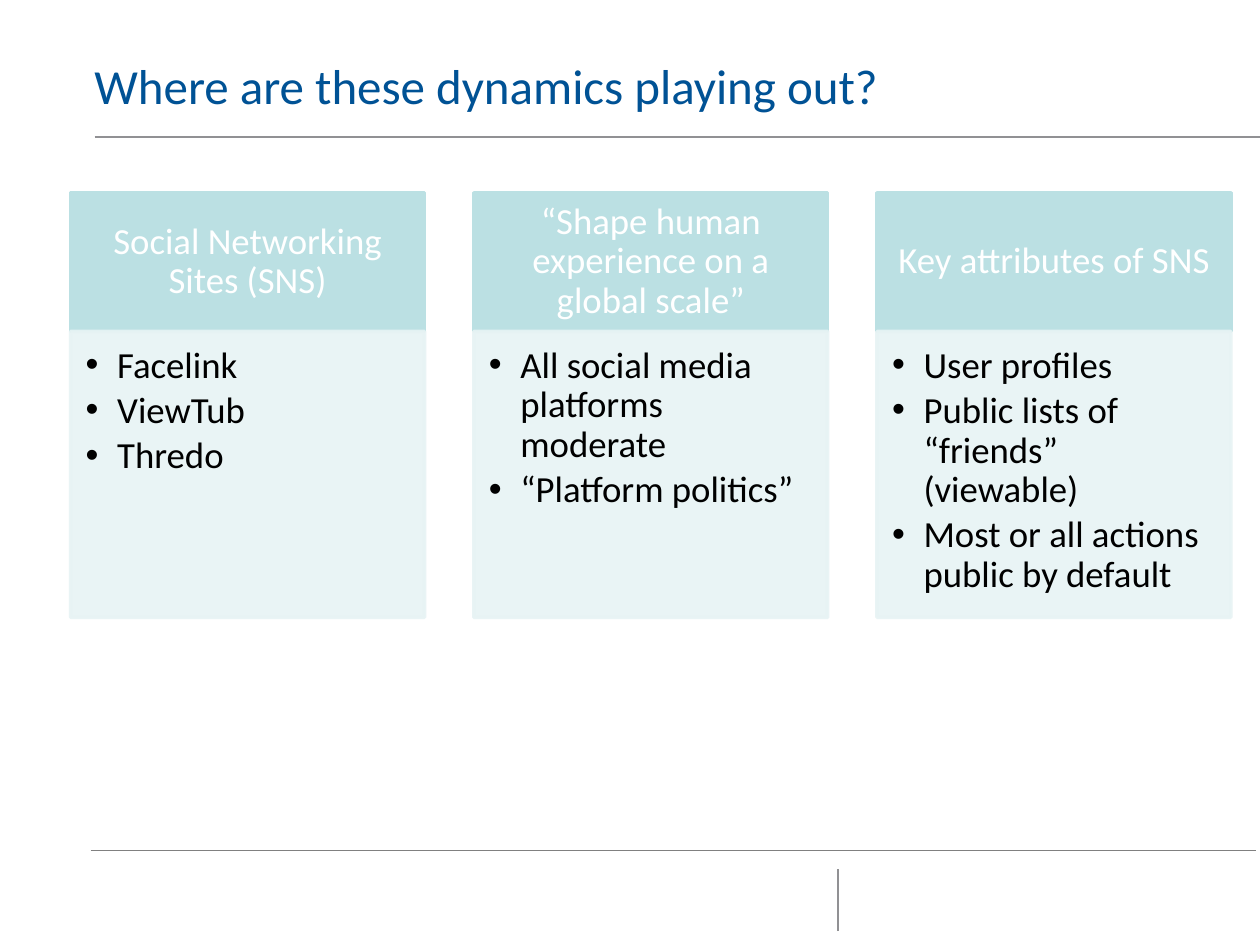
from dataclasses import dataclass

from lxml.etree import SubElement
from pptx import Presentation
from pptx.dml.color import RGBColor
from pptx.enum.shapes import MSO_CONNECTOR, MSO_SHAPE
from pptx.enum.text import MSO_ANCHOR, PP_ALIGN
from pptx.oxml.ns import qn
from pptx.slide import Slide
from pptx.util import Inches, Pt

COLUMNS = [
    ("Social Networking Sites (SNS)", ["Facelink", "ViewTub", "Thredo"]),
    ("“Shape human experience on a global scale”",
     ["All social media platforms moderate", "“Platform politics”"]),
    ("Key attributes of SNS",
     ["User profiles", "Public lists of “friends” (viewable)",
      "Most or all actions public by default"]),
]
RULES = [
    (0.72, 6.75, 9.97, 6.75, "808080"),
    (0.75, 1.09, 10, 1.09, "919194"),
    (6.65, 7.39, 6.65, 6.9, "919194"),
]
LEFT, PITCH, WIDTH = 0.56, 3.2, 2.81
HEADER_TOP, HEADER_HEIGHT, BODY_HEIGHT = 1.53, 1.1, 2.27


def color(value):
    return RGBColor.from_string(value)


@dataclass
class Deck:
    """Draws the elements of the current slide in one style."""
    slide: Slide
    font: str = "Calibri"
    body_size: float = 21
    title_color: str = "005295"
    header_fill: str = "BBE0E3"
    body_fill: str = "E7F3F4"

    def rule(self, x1, y1, x2, y2, stroke):
        line = self.slide.shapes.add_connector(
            MSO_CONNECTOR.STRAIGHT, Inches(x1), Inches(y1), Inches(x2), Inches(y2))
        line.line.color.rgb = color(stroke)
        line.line.width = Pt(1)
        SubElement(line._element.spPr, qn("a:effectLst"))

    def set_text(self, frame, lines, size, ink, insets, spacing, align=PP_ALIGN.LEFT):
        frame.word_wrap = True
        (frame.margin_left, frame.margin_top,
         frame.margin_right, frame.margin_bottom) = map(Inches, insets)
        frame.text = "\n".join(lines)
        for paragraph in frame.paragraphs:
            paragraph.alignment = align
            paragraph.line_spacing = spacing
            for run in paragraph.runs:
                run.font.name = self.font
                run.font.size = Pt(size)
                run.font.color.rgb = color(ink)

    def title(self, text):
        box = self.slide.shapes.add_textbox(
            Inches(0.75), Inches(0.46), Inches(8.63), Inches(1.04))
        self.set_text(box.text_frame, [text], 28, self.title_color, (0, 0, 0, 0), Pt(32))

    def panel(self, left, top, height, fill):
        panel = self.slide.shapes.add_shape(
            MSO_SHAPE.RECTANGLE, Inches(left), Inches(top), Inches(WIDTH), Inches(height))
        panel.shadow.inherit = False
        panel.fill.solid()
        panel.fill.fore_color.rgb = color(fill)
        panel.line.color.rgb = color(fill)
        panel.line.width = Pt(2)
        return panel

    def header(self, left, text):
        frame = self.panel(left, HEADER_TOP, HEADER_HEIGHT, self.header_fill).text_frame
        frame.vertical_anchor = MSO_ANCHOR.MIDDLE
        self.set_text(frame, [text], self.body_size, "FFFFFF",
                      (0.16, 0.09, 0.16, 0.09), 0.9, PP_ALIGN.CENTER)

    def bullets(self, left, items):
        body = self.panel(left, HEADER_TOP + HEADER_HEIGHT, BODY_HEIGHT, self.body_fill)
        for fill_color in body._element.spPr.iter(qn("a:srgbClr")):
            SubElement(fill_color, qn("a:alpha"), val="90000")
        frame = body.text_frame
        frame.vertical_anchor = MSO_ANCHOR.TOP
        self.set_text(frame, items, self.body_size, "000000",
                      (0.12, 0.12, 0.16, 0.18), 0.9)
        for paragraph in frame.paragraphs:
            properties = paragraph._p.get_or_add_pPr()
            properties.set("marL", str(Inches(0.25)))
            properties.set("indent", str(-Inches(0.25)))
            SubElement(properties, qn("a:buFont"), typeface="Arial")
            SubElement(properties, qn("a:buChar"), char="•")
            paragraph.space_after = Pt(0.15 * self.body_size)


def main():
    presentation = Presentation()
    presentation.slide_width, presentation.slide_height = Inches(10), Inches(7.5)
    deck = Deck(presentation.slides.add_slide(presentation.slide_layouts[6]))
    for rule in RULES:
        deck.rule(*rule)
    deck.title("Where are these dynamics playing out?")
    for index, (heading, items) in enumerate(COLUMNS):
        left = LEFT + index * PITCH
        deck.header(left, heading)
        deck.bullets(left, items)
    presentation.save("out.pptx")


if __name__ == "__main__":
    main()
